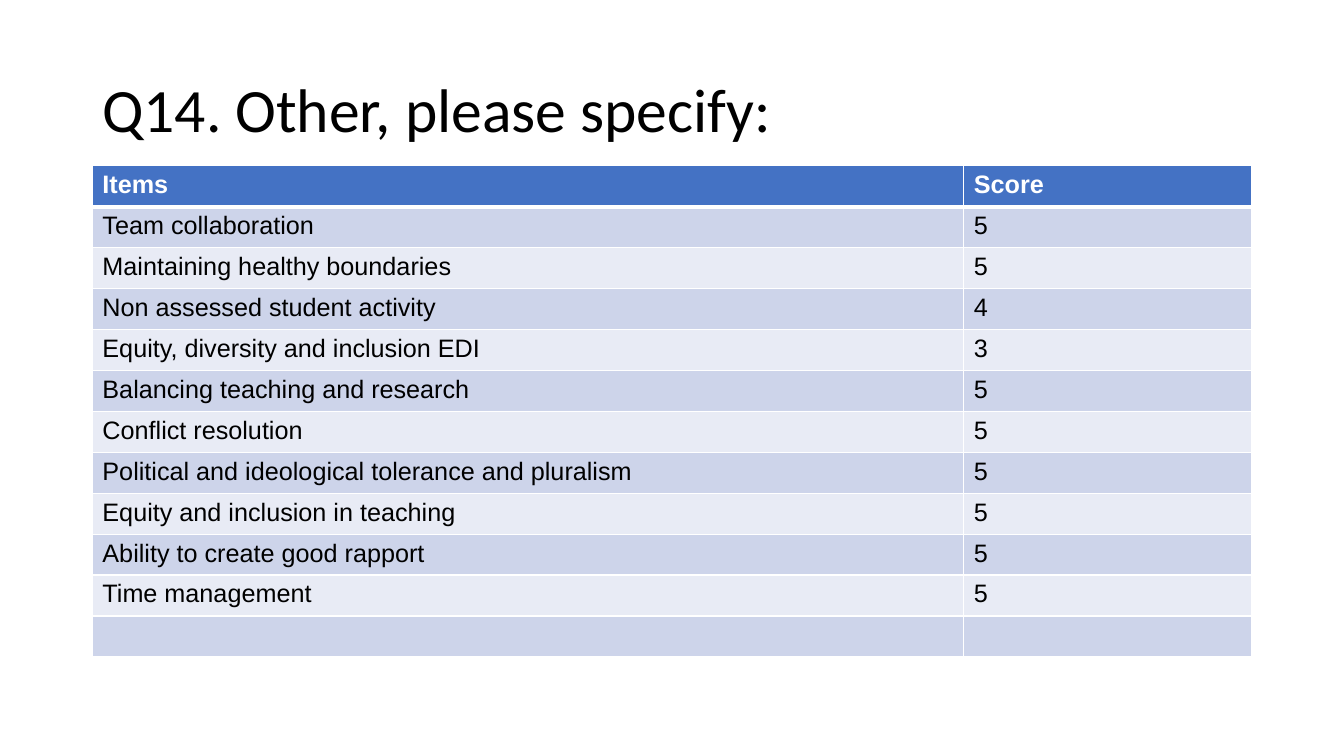
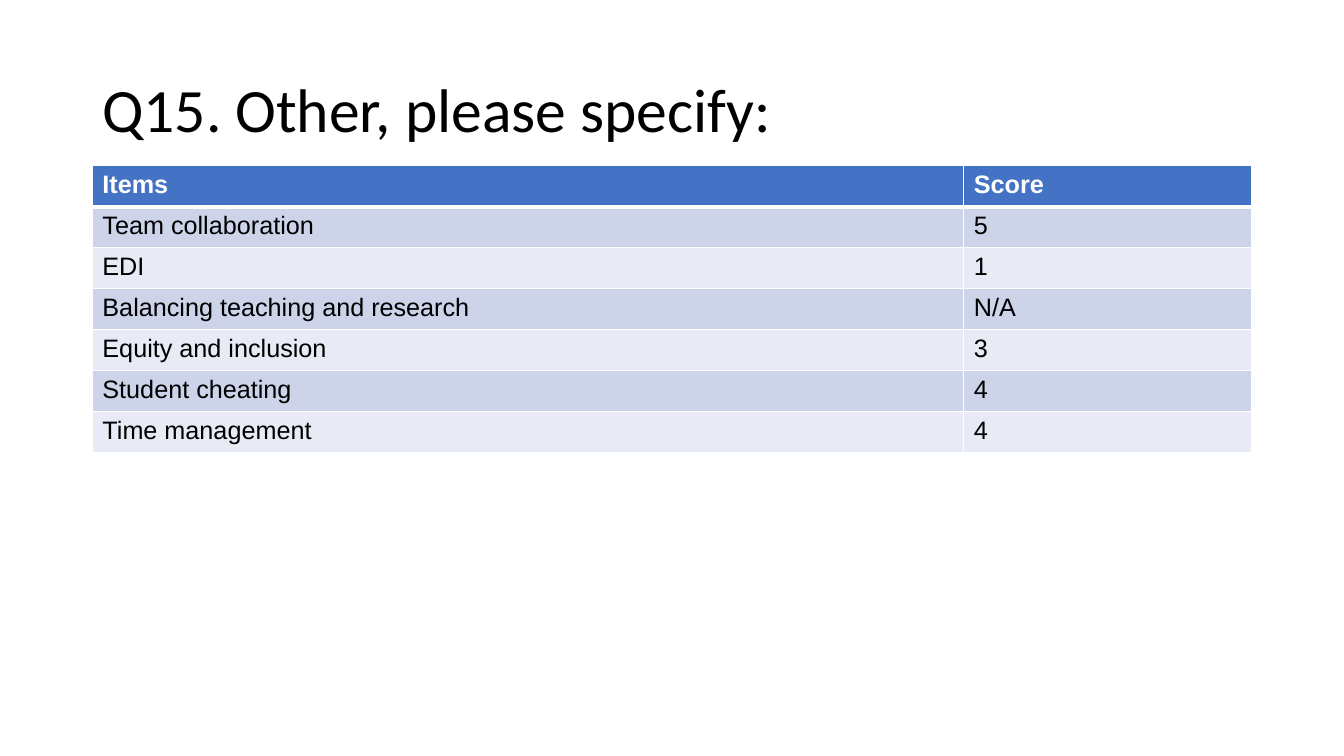
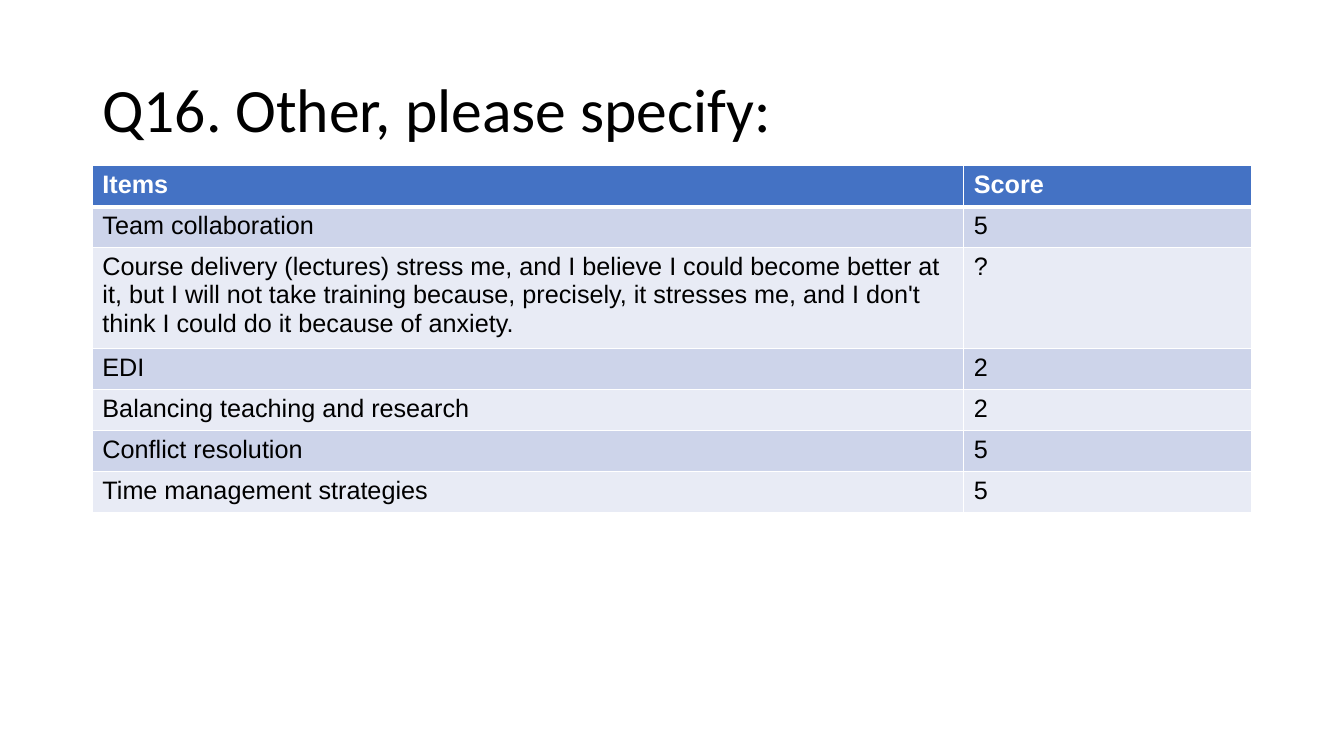
from dataclasses import dataclass

from lxml.etree import SubElement
from pptx import Presentation
from pptx.dml.color import RGBColor
from pptx.enum.text import MSO_ANCHOR
from pptx.oxml.ns import qn
from pptx.util import Pt

HEADER = ("Items", "Score")
QUESTIONS = [
    ("Q14. Other, please specify:", [
        ("Team collaboration", "5"),
        ("Maintaining healthy boundaries", "5"),
        ("Non assessed student activity", "4"),
        ("Equity, diversity and inclusion EDI", "3"),
        ("Balancing teaching and research", "5"),
        ("Conflict resolution", "5"),
        ("Political and ideological tolerance and pluralism", "5"),
        ("Equity and inclusion in teaching", "5"),
        ("Ability to create good rapport", "5"),
        ("Time management", "5"),
        ("", ""),
    ]),
    ("Q15. Other, please specify:", [
        ("Team collaboration", "5"),
        ("EDI", "1"),
        ("Balancing teaching and research", "N/A"),
        ("Equity and inclusion", "3"),
        ("Student cheating", "4"),
        ("Time management", "4"),
    ]),
    ("Q16. Other, please specify:", [
        ("Team collaboration", "5"),
        ("Course delivery (lectures) stress me, and I believe I could become "
         "better at it, but I will not take training because, precisely, it "
         "stresses me, and I don't think I could do it because of anxiety.", "?"),
        ("EDI", "2"),
        ("Balancing teaching and research", "2"),
        ("Conflict resolution", "5"),
        ("Time management strategies", "5"),
    ]),
]


@dataclass(frozen=True)
class Theme:
    title_font: str = "Calibri"
    body_font: str = "Arial"
    title_size: int = 44
    body_size: int = 18
    ink: str = "000000"
    paper: str = "FFFFFF"
    header_fill: str = "4472C4"
    bands: tuple = ("CDD4EA", "E8EBF5")
    rule: int = 1
    header_rule: int = 3


THEME = Theme()
EMU_PER_PX = 9525
SLIDE_SIZE = (1280, 720)
TITLE_BOX = (88, 38, 1104, 139)
TABLE_LEFT, TABLE_TOP = 88, 158
COLUMN_WIDTHS = (830, 274)
ROW_HEIGHT = 39


def px(length):
    return length * EMU_PER_PX


def add_span(para, text, font, size, color, bold=False):
    span = para.add_run()
    span.text = text
    span.font.name = font
    span.font.size = Pt(size)
    span.font.bold = bold
    span.font.color.rgb = RGBColor.from_string(color)


def add_title(page, text):
    box = page.shapes.add_textbox(*map(px, TITLE_BOX))
    frame = box.text_frame
    frame.word_wrap = True
    frame.vertical_anchor = MSO_ANCHOR.MIDDLE
    para = frame.paragraphs[0]
    para.line_spacing = 0.9
    add_span(para, text, THEME.title_font, THEME.title_size, THEME.ink)


def set_borders(cell, top, bottom):
    """Draw the cell's four edges; the widths are in points."""
    props = cell._tc.get_or_add_tcPr()
    edges = [("L", THEME.rule), ("R", THEME.rule), ("T", top), ("B", bottom)]
    for position, (side, width) in enumerate(edges):
        line = SubElement(props, qn(f"a:ln{side}"), w=str(Pt(width)))
        fill = SubElement(line, qn("a:solidFill"))
        SubElement(fill, qn("a:srgbClr"), val=THEME.paper)
        props.insert(position, line)  # edges must precede the cell fill


def add_score_table(page, scores):
    rows = [HEADER, *scores]
    table = page.shapes.add_table(
        len(rows), len(HEADER), px(TABLE_LEFT), px(TABLE_TOP),
        px(sum(COLUMN_WIDTHS)), px(ROW_HEIGHT * len(rows))).table
    for column, width in zip(table.columns, COLUMN_WIDTHS):
        column.width = px(width)
    for r, values in enumerate(rows):
        table.rows[r].height = px(ROW_HEIGHT)
        is_header = r == 0
        fill = THEME.header_fill if is_header else THEME.bands[(r - 1) % 2]
        color = THEME.paper if is_header else THEME.ink
        top = THEME.header_rule if r == 1 else THEME.rule
        bottom = THEME.header_rule if is_header else THEME.rule
        for c, value in enumerate(values):
            cell = table.cell(r, c)
            cell.fill.solid()
            cell.fill.fore_color.rgb = RGBColor.from_string(fill)
            set_borders(cell, top, bottom)
            if value:
                add_span(cell.text_frame.paragraphs[0], value,
                         THEME.body_font, THEME.body_size, color, is_header)


def main():
    deck = Presentation()
    deck.slide_width, deck.slide_height = map(px, SLIDE_SIZE)
    blank = deck.slide_layouts[6]
    for title, scores in QUESTIONS:
        page = deck.slides.add_slide(blank)
        add_title(page, title)
        add_score_table(page, scores)
    deck.save("out.pptx")


if __name__ == "__main__":
    main()
